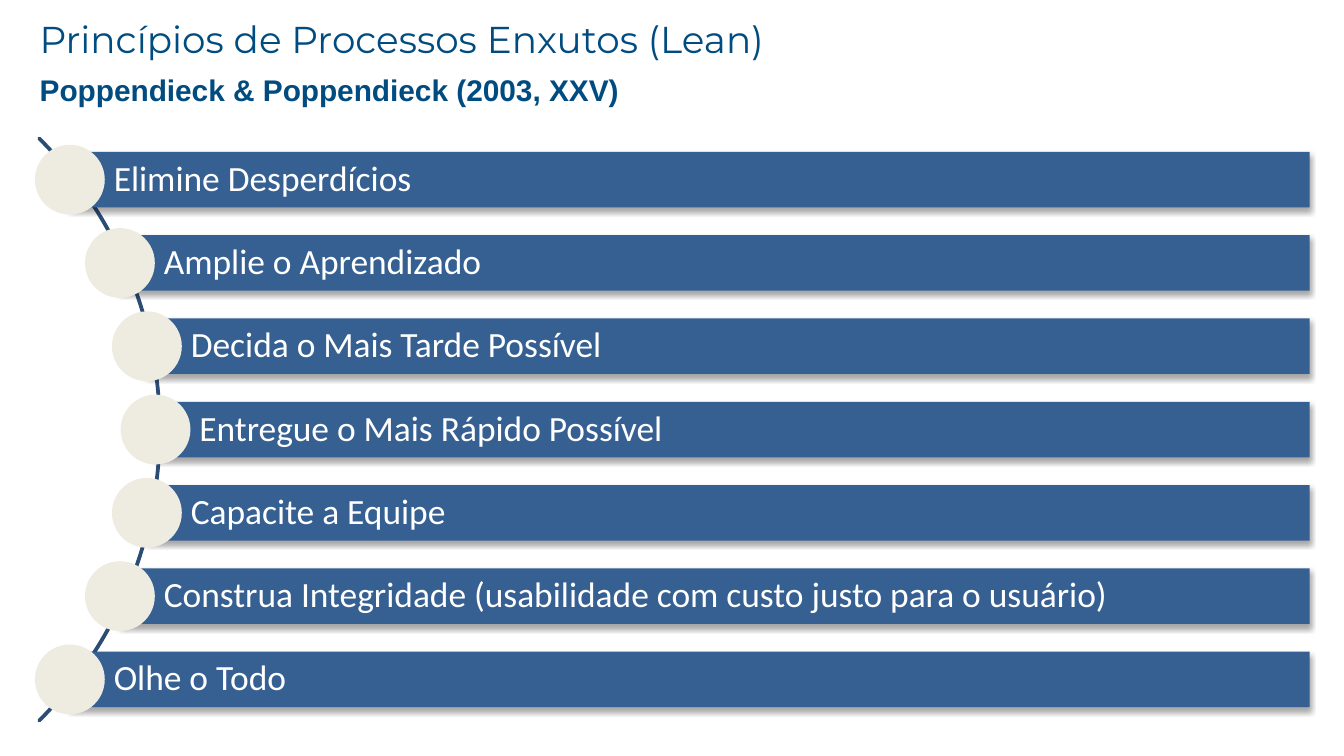
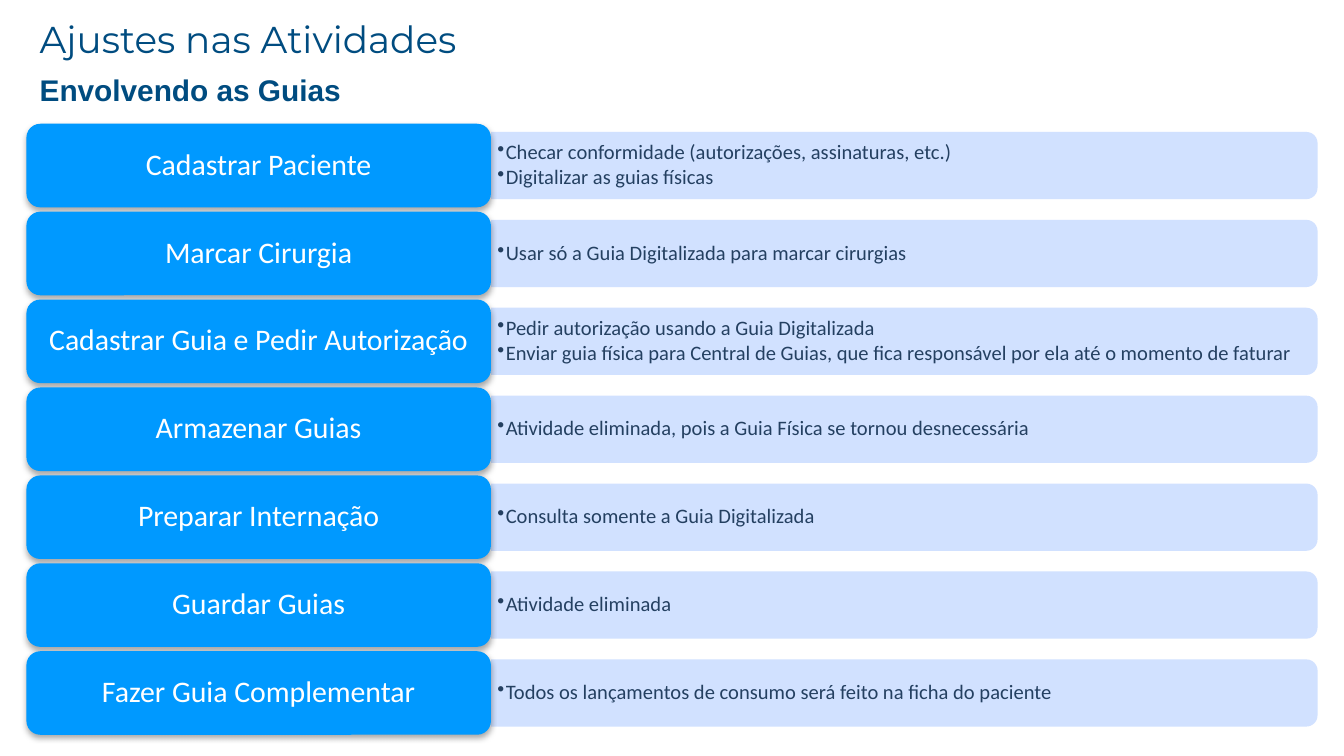
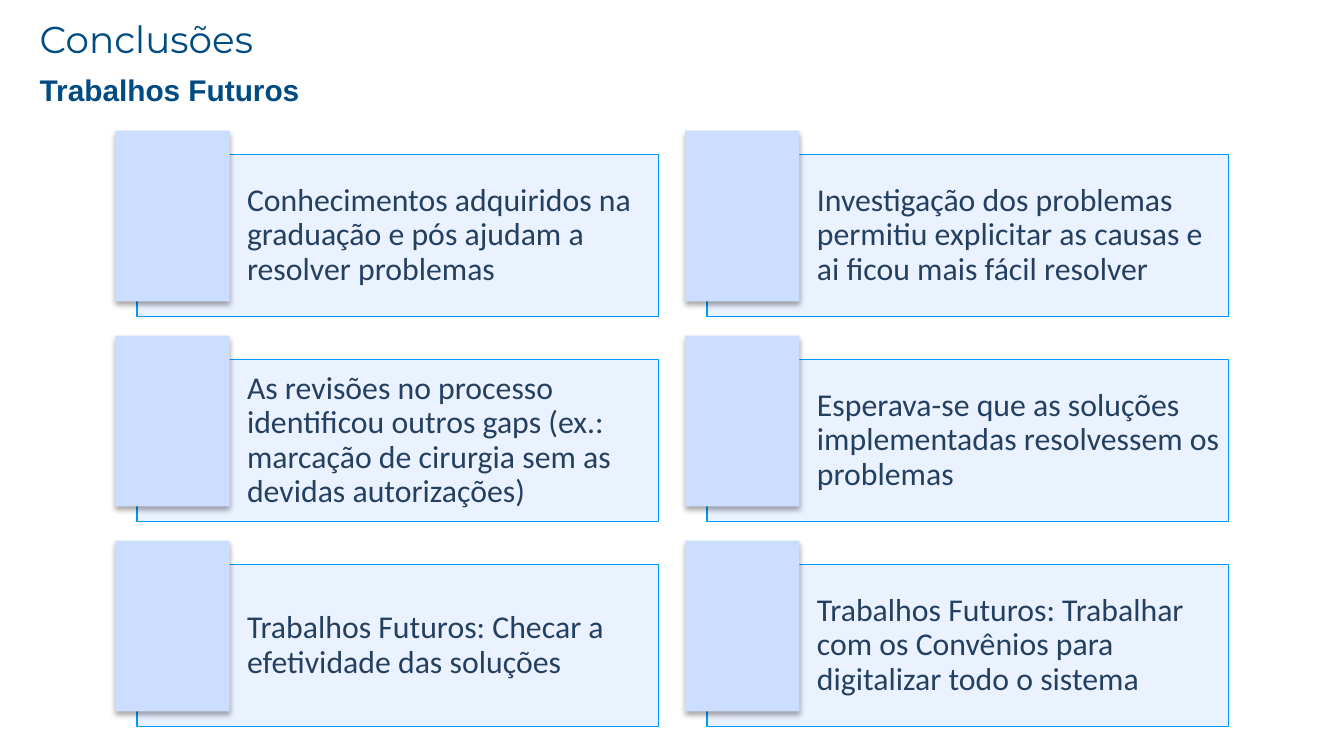
from collections import namedtuple
from math import sqrt

from lxml.etree import SubElement
from pptx import Presentation
from pptx.dml.color import RGBColor
from pptx.enum.shapes import MSO_SHAPE
from pptx.enum.text import MSO_ANCHOR, MSO_AUTO_SIZE, PP_ALIGN
from pptx.oxml.ns import qn
from pptx.util import Cm, Pt

COLORS = {
    "heading": "004C80",
    "arc": "2B4D75",
    "bar": "366092",
    "knob": "EEECE1",
    "white": "FFFFFF",
    "activity": "0099FF",
    "pale": "CCDEFF",
    "ink": "244061",
    "shadow": "000000",
}
Box = namedtuple("Box", "left top width height")
TITLE_BOX = Box(0.5, 0.28, 21, 0.89)
SUBTITLE_BOX = Box(0.5, 1.35, 21, 0.69)

PRINCIPLES = [
    "Elimine Desperdícios",
    "Amplie o Aprendizado",
    "Decida o Mais Tarde Possível",
    "Entregue o Mais Rápido Possível",
    "Capacite a Equipe",
    "Construa Integridade (usabilidade com custo justo para o usuário)",
    "Olhe o Todo",
]
ACTIVITIES = [
    ("Cadastrar Paciente", [
        "Checar conformidade (autorizações, assinaturas, etc.)",
        "Digitalizar as guias físicas"]),
    ("Marcar Cirurgia", ["Usar só a Guia Digitalizada para marcar cirurgias"]),
    ("Cadastrar Guia e Pedir Autorização", [
        "Pedir autorização usando a Guia Digitalizada",
        "Enviar guia física para Central de Guias, que fica responsável por ela até o momento de faturar"]),
    ("Armazenar Guias", ["Atividade eliminada, pois a Guia Física se tornou desnecessária"]),
    ("Preparar Internação", ["Consulta somente a Guia Digitalizada"]),
    ("Guardar Guias", ["Atividade eliminada"]),
    ("Fazer Guia Complementar", ["Todos os lançamentos de consumo será feito na ficha do paciente"]),
]
CONCLUSIONS = [
    "Conhecimentos adquiridos na graduação e pós ajudam a resolver problemas",
    "Investigação dos problemas permitiu explicitar as causas e ai ficou mais fácil resolver",
    "As revisões no processo identificou outros gaps (ex.: marcação de cirurgia sem as devidas autorizações)",
    "Esperava-se que as soluções implementadas resolvessem os problemas",
    "Trabalhos Futuros: Checar a efetividade das soluções",
    "Trabalhos Futuros: Trabalhar com os Convênios para digitalizar todo o sistema",
]


def lengths(box):
    """Turn a box in centimetres into lengths."""
    return [Cm(side) for side in box]


def write(frame, *lines, size, color, font="Calibri", bold=False, align=PP_ALIGN.LEFT,
          spacing=0.9, after=0, bullet=None, hang=0, insets=(0.25, 0.13, 0.25, 0.13)):
    """Fill a text frame with one formatted paragraph per line."""
    frame.word_wrap = True
    frame.auto_size = MSO_AUTO_SIZE.NONE
    frame.vertical_anchor = MSO_ANCHOR.MIDDLE
    (frame.margin_left, frame.margin_top,
     frame.margin_right, frame.margin_bottom) = lengths(insets)
    for index, line in enumerate(lines):
        paragraph = frame.add_paragraph() if index else frame.paragraphs[0]
        properties = paragraph._p.get_or_add_pPr()
        properties.set("marL", str(Cm(hang)))
        properties.set("indent", str(-Cm(hang)))
        if bullet:
            SubElement(properties, qn("a:buChar")).set("char", bullet)
        else:
            SubElement(properties, qn("a:buNone"))
        paragraph.alignment = align
        paragraph.line_spacing = spacing
        paragraph.space_before = Pt(0)
        paragraph.space_after = Pt(after)
        run = paragraph.add_run()
        run.text = line
        run.font.name = font
        run.font.size = Pt(size)
        run.font.bold = bold
        run.font.color.rgb = RGBColor.from_string(COLORS[color])


def add_shadow(shape):
    """Give a shape the soft shadow that falls below it."""
    effects = shape._element.spPr.find(qn("a:effectLst"))
    outer = SubElement(effects, qn("a:outerShdw"), blurRad="40000", dist="23000",
                       dir="5400000", rotWithShape="0")
    tint = SubElement(outer, qn("a:srgbClr"), val=COLORS["shadow"])
    SubElement(tint, qn("a:alpha"), val="35000")


def draw(slide, preset, box, fill=None, opacity=100, line=None, weight=0.75, shadow=False):
    """Add a preset shape with its fill, outline and shadow."""
    shape = slide.shapes.add_shape(preset, *lengths(box))
    shape.shadow.inherit = False
    if fill:
        shape.fill.solid()
        shape.fill.fore_color.rgb = RGBColor.from_string(COLORS[fill])
        if opacity < 100:
            tint = shape._element.spPr.find(qn("a:solidFill"))[0]
            SubElement(tint, qn("a:alpha"), val=str(opacity * 1000))
    else:
        shape.fill.background()
    if line:
        shape.line.color.rgb = RGBColor.from_string(COLORS[line])
        shape.line.width = Pt(weight)
    else:
        shape.line.fill.background()
    if shadow:
        add_shadow(shape)
    return shape


def add_headed_slide(deck, title, subtitle):
    """Add a slide with its title and subtitle in the placeholders."""
    slide = deck.slides.add_slide(deck.slide_layouts[1])
    headings = [
        (slide.shapes.title, TITLE_BOX, title, dict(size=20, font="Montserrat")),
        (slide.placeholders[1], SUBTITLE_BOX, subtitle, dict(size=16, font="Arial", bold=True)),
    ]
    for heading, box, text, style in headings:
        heading.left, heading.top, heading.width, heading.height = lengths(box)
        write(heading.text_frame, text, color="heading", spacing=1, **style)
    return slide


def add_principles(slide, box):
    """Hang one bar per principle on an arc at the left of the box."""
    pitch = box.height / len(PRINCIPLES)
    bar_height, knob, radius, outer = 1.05, 1.32, 7.7, 7.78
    hub_x, hub_y = box.left - 5.42, box.top + box.height / 2
    arc = draw(slide, MSO_SHAPE.BLOCK_ARC,
               Box(hub_x - outer, hub_y - outer, 2 * outer, 2 * outer), line="arc", weight=2)
    for index, value in enumerate((189, 27, 0)):
        arc.adjustments[index] = value
    for row, principle in enumerate(PRINCIPLES):
        y = box.top + (row + 0.5) * pitch
        x = hub_x + sqrt(radius ** 2 - (y - hub_y) ** 2)
        bar = draw(slide, MSO_SHAPE.RECTANGLE,
                   Box(x, y - bar_height / 2, box.left + box.width - x, bar_height),
                   fill="bar", shadow=True)
        write(bar.text_frame, principle, size=19, color="white", insets=(0.83, 0.12, 0.12, 0.12))
        draw(slide, MSO_SHAPE.OVAL, Box(x - knob / 2, y - knob / 2, knob, knob), fill="knob")


def add_activities(slide, box):
    """Stack the activities, each with its adjustments on the right."""
    label_width, label_height, detail_height = 8.78, 1.58, 1.27
    detail_width = box.width - label_width
    pitch = (box.height - label_height) / (len(ACTIVITIES) - 1)
    detail_left = box.left + label_width
    for row, (activity, adjustments) in enumerate(ACTIVITIES):
        top = box.top + row * pitch
        middle = top + label_height / 2
        panel = draw(slide, MSO_SHAPE.ROUND_2_SAME_RECTANGLE,
                     Box(detail_left + (detail_width - detail_height) / 2,
                         middle - detail_width / 2, detail_height, detail_width),
                     fill="pale", opacity=90)
        panel.rotation = 90
        details = slide.shapes.add_textbox(
            *lengths(Box(detail_left, middle - 0.57, detail_width - 0.07, 1.14)))
        write(details.text_frame, *adjustments, size=11, color="ink", after=1.65,
              bullet="•", hang=0.16, insets=(0.12, 0.05, 0.12, 0.05))
        label = draw(slide, MSO_SHAPE.ROUNDED_RECTANGLE,
                     Box(box.left, top, label_width, label_height), fill="activity", shadow=True)
        write(label.text_frame, activity, size=16, color="white", align=PP_ALIGN.CENTER,
              insets=(0.25, 0.15, 0.25, 0.15))


def add_conclusions(slide, box):
    """Lay the conclusions out in two columns of tabbed cards."""
    columns, rows = 2, len(CONCLUSIONS) // 2
    shift_x, shift_y, card_width, card_height = 0.41, 0.45, 9.86, 3.07
    pitch_x = (box.width - shift_x - card_width) / (columns - 1)
    pitch_y = (box.height - shift_y - card_height) / (rows - 1)
    for index, conclusion in enumerate(CONCLUSIONS):
        row, column = divmod(index, columns)
        left, top = box.left + column * pitch_x, box.top + row * pitch_y
        card = draw(slide, MSO_SHAPE.RECTANGLE,
                    Box(left + shift_x, top + shift_y, card_width, card_height),
                    fill="pale", opacity=40, line="activity")
        write(card.text_frame, conclusion, size=17, color="ink", insets=(2.08, 0.17, 0.17, 0.17))
        draw(slide, MSO_SHAPE.RECTANGLE, Box(left, top, 2.16, 3.23), fill="pale", shadow=True)


def main():
    """Build the three slides and save the deck."""
    deck = Presentation()
    deck.slide_width, deck.slide_height = Cm(25.4), Cm(14.29)
    add_principles(
        add_headed_slide(deck, "Princípios de Processos Enxutos (Lean)",
                         "Poppendieck & Poppendieck (2003, XXV)"),
        Box(0.66, 2.61, 24.09, 11.02))
    add_activities(
        add_headed_slide(deck, "Ajustes nas Atividades", "Envolvendo as Guias"),
        Box(0.5, 2.34, 24.4, 11.55))
    add_conclusions(
        add_headed_slide(deck, "Conclusões", "Trabalhos Futuros"),
        Box(2.18, 2.47, 21.04, 11.27))
    deck.save("out.pptx")


if __name__ == "__main__":
    main()
